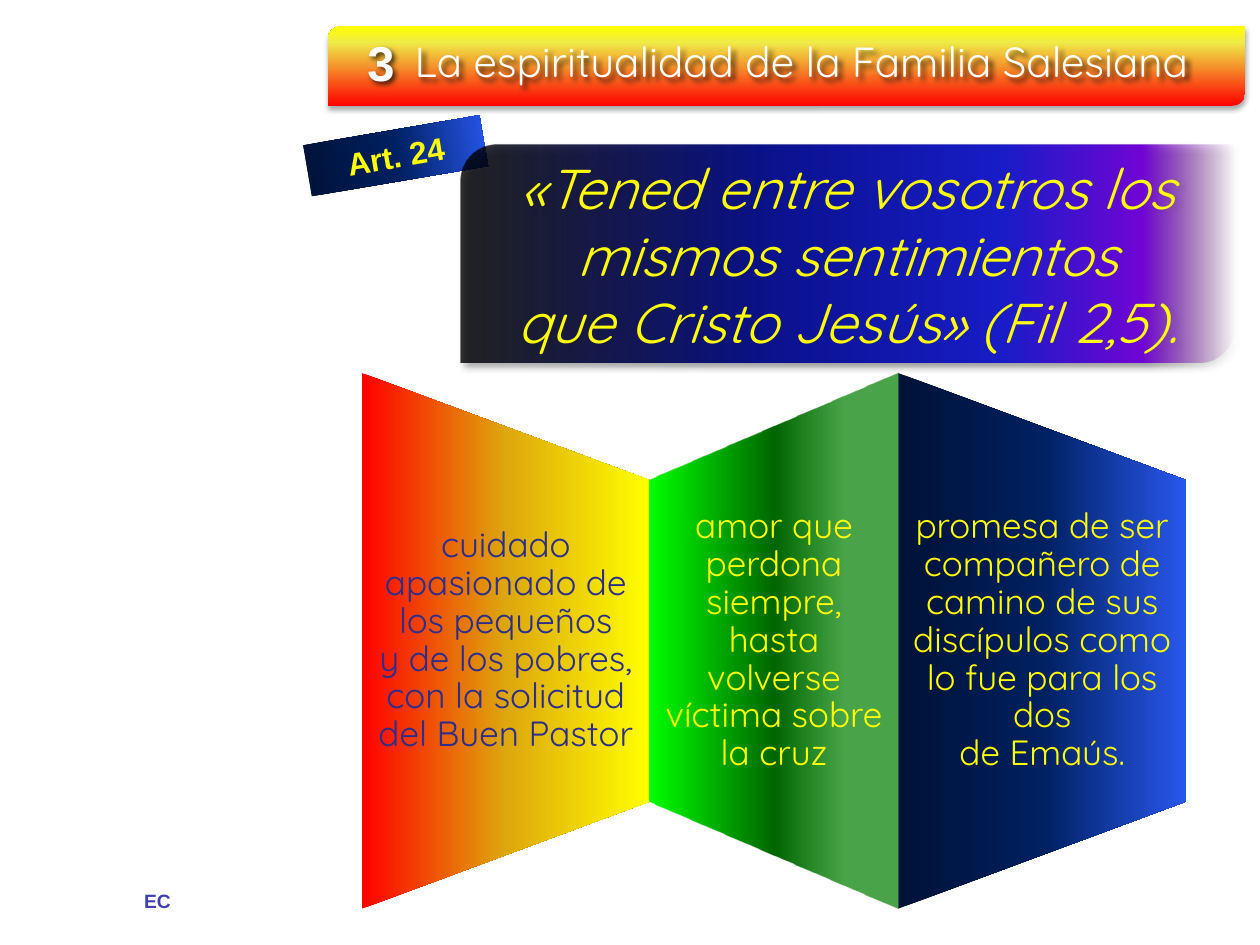
import pptx
import pptx.util
import pptx.dml.color
import pptx.enum.shapes
import pptx.enum.text
import pptx.oxml
import pptx.oxml.ns
import lxml.etree

Pt = pptx.util.Pt
RGB = pptx.dml.color.RGBColor
SHAPE = pptx.enum.shapes.MSO_SHAPE
ALIGN = pptx.enum.text.PP_ALIGN
ANCHOR = pptx.enum.text.MSO_ANCHOR
qn = pptx.oxml.ns.qn

YELLOW = RGB(0xFF, 0xFF, 0x00)
WHITE = RGB(0xFF, 0xFF, 0xFF)
INDIGO = RGB(0x2D, 0x2D, 0x8A)
FOOTER = RGB(0x40, 0x40, 0xB3)
BLACK = RGB(0, 0, 0)

NIGHT = [(0, RGB(0x00, 0x12, 0x36), 100), (50, RGB(0x00, 0x20, 0x60), 100),
         (100, RGB(0x28, 0x57, 0xEC), 100)]
SUNSET = [(0, RGB(0xFF, 0, 0), 100), (80, RGB(0xEF, 0xEB, 0x47), 100), (100, YELLOW, 100)]
VIOLET = [(0, BLACK, 73 + 9), (40, RGB(0x0A, 0x12, 0x8C), 100), (70, RGB(0x18, 0x1C, 0xC7), 100),
          (88, RGB(0x70, 0x05, 0xD4), 100), (100, RGB(0x8C, 0x3D, 0x91), 0)]
VIOLET[0] = (0, BLACK, 80)
FIRE = [(0, RGB(0xFF, 0, 0), 100), (50, RGB(0xDD, 0xA7, 0x0D), 100), (100, YELLOW, 100)]
GREEN = [(0, RGB(0, 0xFF, 0), 100), (50, RGB(0, 0x66, 0), 100), (78, RGB(0, 0x80, 0), 71)]

TITLE = "La espiritualidad de la Familia Salesiana"
QUOTE = ["«Tened entre vosotros los mismos sentimientos", "que Cristo Jesús» (Fil 2,5)."]
PANELS = [
    (164.5, True, GREEN and FIRE, INDIGO,
     ["cuidado apasionado de los pequeños", "y de los pobres, con la solicitud del Buen Pastor"]),
    (142, False, GREEN, YELLOW,
     ["amor que perdona siempre, hasta volverse víctima sobre la cruz"]),
    (164.5, True, NIGHT, YELLOW,
     ["promesa de ser compañero de camino de sus discípulos como lo fue para los dos",
      "de Emaús."]),
]
PANELS_LEFT, PANELS_TOP, PANELS_BOTTOM, FOLD = 206.8, 213.2, 519.2, 61.2


def color_xml(parent, color, alpha):
    clr = lxml.etree.SubElement(parent, qn("a:srgbClr"), val=str(color))
    if alpha < 100:
        lxml.etree.SubElement(clr, qn("a:alpha"), val=str(alpha * 1000))


def paint(sp, stops, angle=0):
    sp.line.fill.background()
    sp.shadow.inherit = False
    sp.fill.background()
    spPr = sp._element.spPr
    grad = pptx.oxml.parse_xml(
        '<a:gradFill xmlns:a="http://schemas.openxmlformats.org/drawingml/2006/main"'
        ' rotWithShape="1"><a:gsLst/></a:gradFill>')
    for pos, color, alpha in stops:
        gs = lxml.etree.SubElement(grad[0], qn("a:gs"), pos=str(pos * 1000))
        color_xml(gs, color, alpha)
    lxml.etree.SubElement(grad, qn("a:lin"), ang=str(angle * 60000), scaled="0")
    spPr.replace(spPr.find(qn("a:noFill")), grad)


def cast_shadow(sp, alpha, blur, dist, angle):
    sp.shadow.inherit = False
    effects = sp._element.spPr.find(qn("a:effectLst"))
    shadow = lxml.etree.SubElement(
        effects, qn("a:outerShdw"), blurRad=str(Pt(blur)), dist=str(Pt(dist)),
        dir=str(angle * 60000), algn="tl", rotWithShape="0")
    color_xml(shadow, BLACK, alpha)


def write(sp, lines, font, size, color, align=ALIGN.CENTER, anchor=ANCHOR.MIDDLE,
          bold=False, italic=False, spacing=None, wrap=True):
    tf = sp.text_frame
    tf.word_wrap = wrap
    tf.vertical_anchor = anchor
    tf.text = "\n".join(lines)
    for p in tf.paragraphs:
        p.alignment = align
        p.line_spacing = spacing
        p.font.name, p.font.size = font, Pt(size)
        p.font.bold, p.font.italic = bold, italic
        p.font.color.rgb = color


def box(shapes, kind, *place):
    return shapes.add_shape(kind, *map(Pt, place))


prs = pptx.Presentation()
prs.slide_width, prs.slide_height = Pt(720), Pt(540)
slide = prs.slides.add_slide(prs.slide_layouts[5])
shapes = slide.shapes

footer = shapes.add_textbox(Pt(74.9), Pt(504.7), Pt(30.2), Pt(20.9))
write(footer, ["EC"], "Arial", 11, FOOTER, anchor=ANCHOR.TOP, bold=True, wrap=False)

article = box(shapes, SHAPE.RECTANGLE, 175, 74.2, 102.2, 29.5)
article.rotation = 350.3
paint(article, NIGHT)
write(article, ["Art. 24"], "Arial", 18, YELLOW, bold=True)

banner = box(shapes, SHAPE.ROUND_2_DIAG_RECTANGLE, 187.2, 15.1, 524.2, 45.4)
paint(banner, SUNSET, 270)
cast_shadow(banner, 35, 3.1, 1.8, 90)

number = shapes.add_textbox(Pt(200.9), Pt(15.1), Pt(33.8), Pt(41))
write(number, ["3"], "Arial", 28, WHITE, anchor=ANCHOR.TOP, bold=True)
cast_shadow(number, 70, 3, 2, 45)

title = shapes.title
title.left, title.top, title.width, title.height = map(Pt, (229.7, 16.6, 481.7, 36))
write(title, [TITLE], "Quicksand", 24, WHITE, align=ALIGN.LEFT, anchor=ANCHOR.TOP)
cast_shadow(title, 70, 3, 3, 45)
shapes._spTree.append(title._element)

quote = box(shapes, SHAPE.ROUND_2_DIAG_RECTANGLE, 263.5, 82.8, 442.1, 124.6)
paint(quote, VIOLET)
cast_shadow(quote, 40, 4, 3, 45)
write(quote, QUOTE, "Quicksand", 32, YELLOW, italic=True)

left = PANELS_LEFT
for width, tall_left, stops, color, lines in PANELS:
    right = left + width
    tall, short = (left, right) if tall_left else (right, left)
    outline = shapes.build_freeform(Pt(tall), Pt(PANELS_BOTTOM))
    outline.add_line_segments([
        (Pt(tall), Pt(PANELS_TOP)), (Pt(short), Pt(PANELS_TOP + FOLD)),
        (Pt(short), Pt(PANELS_BOTTOM - FOLD))])
    panel = outline.convert_to_shape()
    paint(panel, stops)
    tf = panel.text_frame
    tf.margin_left = tf.margin_right = Pt(8)
    tf.margin_top = tf.margin_bottom = Pt(65)
    write(panel, lines, "Quicksand", 20, color, spacing=0.9)
    left = right

prs.save("out.pptx")
